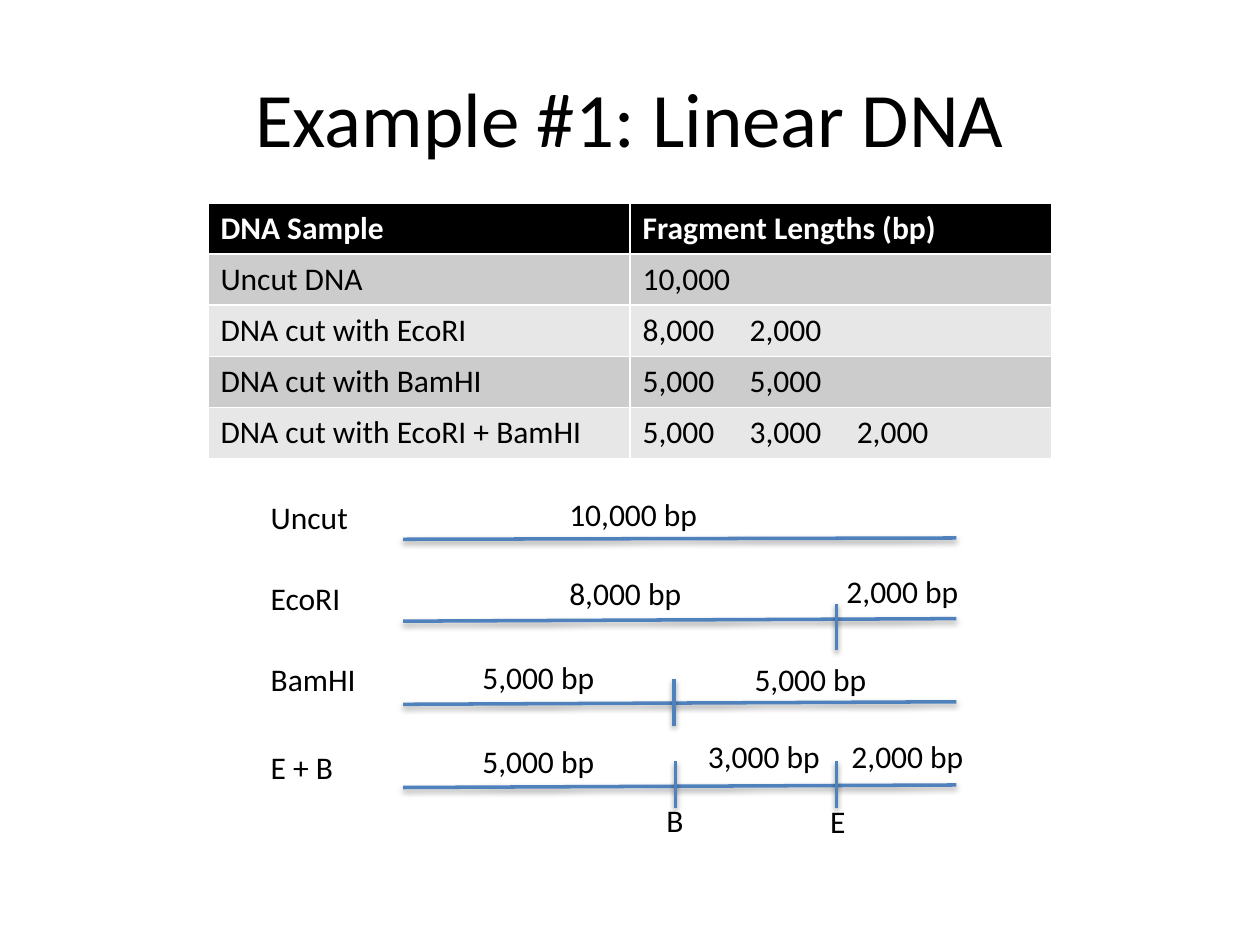
from lxml.etree import SubElement
from pptx import Presentation
from pptx.dml.color import RGBColor
from pptx.enum.shapes import MSO_CONNECTOR
from pptx.enum.text import MSO_ANCHOR, MSO_AUTO_SIZE, PP_ALIGN
from pptx.oxml.ns import qn
from pptx.util import Inches, Pt

COLORS = {
    "text": "000000", "head": "000000", "light": "FFFFFF",
    "odd": "CCCCCC", "even": "E7E7E7", "line": "4F81BD",
}
TAB = 0.85

ROWS = [
    ("DNA Sample", "Fragment Lengths (bp)"),
    ("Uncut DNA", "10,000"),
    ("DNA cut with EcoRI", "8,000\t2,000"),
    ("DNA cut with BamHI", "5,000\t5,000"),
    ("DNA cut with EcoRI + BamHI", "5,000\t3,000\t2,000"),
]

# Name, its top and width; left end of the strand; cuts (x, top);
# fragments (text, left, top, width)
STRANDS = [
    ("Uncut", 3.9, 0.82, 4.28, 4.27, [], [("10,000 bp", 4.42, 3.88, 1.23)]),
    ("EcoRI", 4.55, 0.77, 4.93, 4.91, [(6.64, 4.79)],
     [("8,000 bp", 4.42, 4.51, 1.1), ("2,000 bp", 6.62, 4.49, 1.1)]),
    ("BamHI", 5.19, 0.88, 5.59, 5.57, [(5.35, 5.39)],
     [("5,000 bp", 3.73, 5.17, 1.1), ("5,000 bp", 5.89, 5.19, 1.1)]),
    ("E + B", 5.89, 0.71, 6.25, 6.23, [(5.36, 6.04), (6.64, 6.04)],
     [("5,000 bp", 3.73, 5.84, 1.1), ("3,000 bp", 5.52, 5.8, 1.1),
      ("2,000 bp", 6.66, 5.8, 1.1)]),
]
SITES = [("B", 5.19, 6.31, 0.34), ("E", 6.49, 6.32, 0.33)]


def shade(name):
    return RGBColor.from_string(COLORS[name])


def write(frame, text, size=18, color="text", bold=False, align=None):
    para = frame.paragraphs[0]
    para.alignment = align
    run = para.add_run()
    run.text = text
    font = run.font
    font.name, font.size, font.bold = "Calibri", Pt(size), bold
    font.color.rgb = shade(color)
    return para


def set_tabs(para, count):
    stops = SubElement(para._p.get_or_add_pPr(), qn("a:tabLst"))
    for i in range(1, count + 1):
        SubElement(stops, qn("a:tab"), pos=str(Inches(TAB * i)), algn="l")


class Page:
    def __init__(self, slide):
        self.slide = slide
        self.shapes = slide.shapes

    def title(self, text):
        box = self.shapes.title
        box.left, box.top = Inches(0.5), Inches(0.3)
        box.width, box.height = Inches(9), Inches(1.25)
        box.text_frame.vertical_anchor = MSO_ANCHOR.MIDDLE
        write(box.text_frame, text, size=44, align=PP_ALIGN.CENTER)

    def table(self, rows, left, top, width, height):
        grid = self.shapes.add_table(
            len(rows), len(rows[0]), Inches(left), Inches(top),
            Inches(width), Inches(height)).table
        for r, row in enumerate(rows):
            fill = "head" if r == 0 else "odd" if r % 2 else "even"
            for c, text in enumerate(row):
                cell = grid.cell(r, c)
                cell.fill.solid()
                cell.fill.fore_color.rgb = shade(fill)
                para = write(cell.text_frame, text, bold=r == 0,
                             color="text" if r else "light")
                if "\t" in text:
                    set_tabs(para, text.count("\t"))

    def label(self, text, left, top, width):
        box = self.shapes.add_textbox(
            Inches(left), Inches(top), Inches(width), Inches(0.4))
        frame = box.text_frame
        frame.word_wrap = False
        frame.auto_size = MSO_AUTO_SIZE.SHAPE_TO_FIT_TEXT
        write(frame, text)

    def line(self, x1, y1, x2, y2):
        """Draw a line that keeps the soft shadow of the theme."""
        line = self.shapes.add_connector(
            MSO_CONNECTOR.STRAIGHT,
            Inches(x1), Inches(y1), Inches(x2), Inches(y2)).line
        line.color.rgb = shade("line")
        line.width = Pt(2)

    def strand(self, name, top, width, start, end, cuts, parts):
        self.label(name, 2.05, top, width)
        self.line(3.2, start, 7.59, end)
        for x, y in cuts:
            self.line(x, y, x, y + 0.37)
        for part in parts:
            self.label(*part)


def main():
    deck = Presentation()
    deck.slide_width, deck.slide_height = Inches(10), Inches(7.5)
    page = Page(deck.slides.add_slide(deck.slide_layouts[5]))
    page.title("Example #1: Linear DNA")
    page.table(ROWS, 1.65, 1.61, 6.7, 2.03)
    for strand in STRANDS:
        page.strand(*strand)
    for site in SITES:
        page.label(*site)
    deck.save("out.pptx")


if __name__ == "__main__":
    main()
